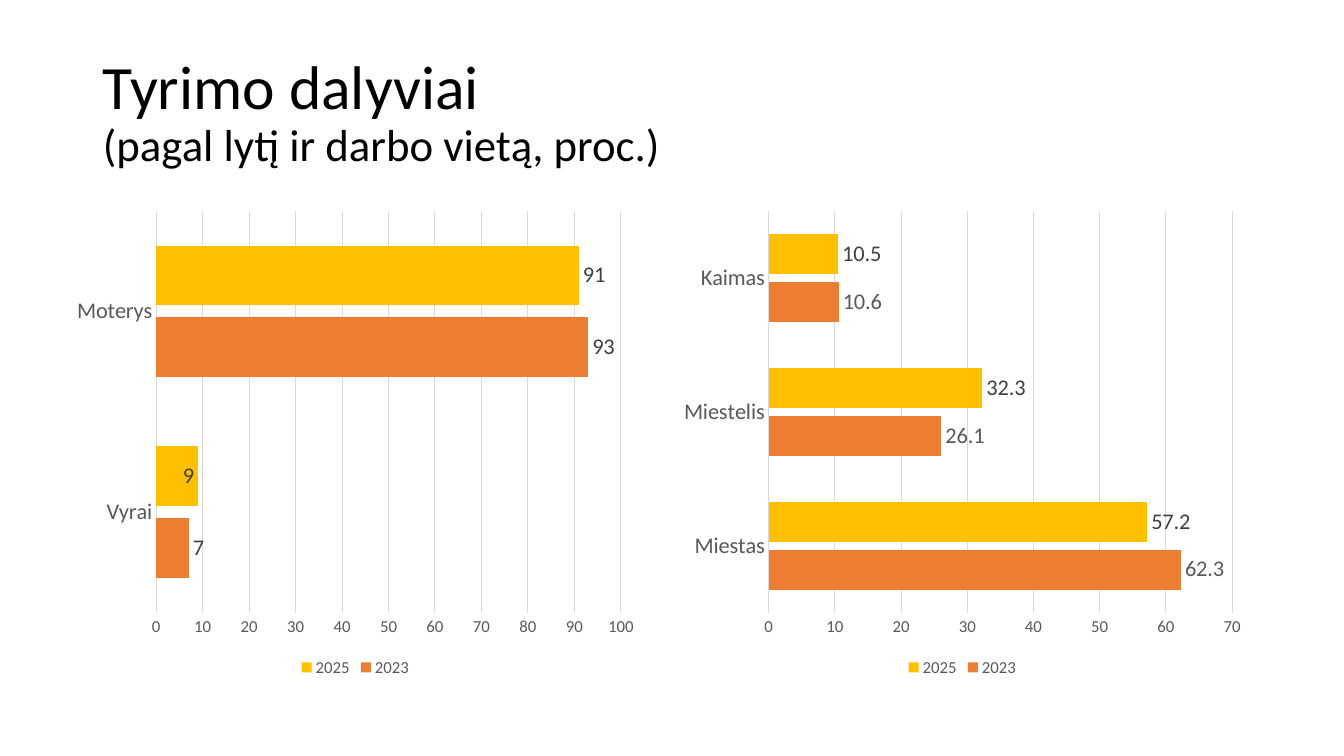
"""Build a slide with two bar charts of survey participants by gender and workplace."""
from pptx import Presentation
from pptx.chart.data import CategoryChartData
from pptx.dml.color import RGBColor
from pptx.enum.chart import XL_CHART_TYPE, XL_LABEL_POSITION, XL_LEGEND_POSITION, XL_TICK_MARK
from pptx.enum.text import MSO_ANCHOR, MSO_AUTO_SIZE, PP_ALIGN
from pptx.util import Inches, Pt

FONT = "Calibri"
BLACK = RGBColor(0x00, 0x00, 0x00)
DARK = RGBColor(0x40, 0x40, 0x40)
GRAY = RGBColor(0x59, 0x59, 0x59)
GRID = RGBColor(0xD9, 0xD9, 0xD9)
ORANGE = RGBColor(0xED, 0x7D, 0x31)
YELLOW = RGBColor(0xFF, 0xC0, 0x00)
OUTSIDE = XL_LABEL_POSITION.OUTSIDE_END
INSIDE = XL_LABEL_POSITION.INSIDE_END


def style(font, size, color):
    font.name = FONT
    font.size = Pt(size)
    font.bold = False
    font.color.rgb = color


def add_text(p, text, size=32, color=BLACK):
    r = p.add_run()
    r.text = text
    style(r.font, size, color)


prs = Presentation()
prs.slide_width = Inches(13.33)
prs.slide_height = Inches(7.5)
s = prs.slides.add_slide(prs.slide_layouts[5])

title = s.shapes.title
title.left, title.top = Inches(0.92), Inches(0.4)
title.width, title.height = Inches(10.97), Inches(1.45)
tf = title.text_frame
tf.word_wrap = True
tf.auto_size = MSO_AUTO_SIZE.NONE
tf.vertical_anchor = MSO_ANCHOR.MIDDLE
p = tf.paragraphs[0]
p.alignment = PP_ALIGN.LEFT
p.line_spacing = 0.9
add_text(p, "Tyrimo dalyviai", size=44)
p.add_line_break()
add_text(p, "(pagal lytį ir darbo vietą, proc.)")

charts = [
    (6.67, 70, ["Miestas", "Miestelis", "Kaimas"],
     [("2023", [62.3, 26.1, 10.6], ORANGE, GRAY, OUTSIDE),
      ("2025", [57.2, 32.3, 10.5], YELLOW, DARK, OUTSIDE)]),
    (0.65, 100, ["Vyrai", "Moterys"],
     [("2023", [7, 93], ORANGE, DARK, OUTSIDE),
      ("2025", [9, 91], YELLOW, DARK, INSIDE)]),
]

for left, top_value, categories, series in charts:
    data = CategoryChartData()
    data.categories = categories
    for name, values, *_ in series:
        data.add_series(name, values)
    chart = s.shapes.add_chart(XL_CHART_TYPE.BAR_CLUSTERED, Inches(left), Inches(2),
                               Inches(5.75), Inches(4.76), data).chart
    style(chart.font, 10, BLACK)
    chart.has_title = False
    chart.has_legend = True
    chart.legend.position = XL_LEGEND_POSITION.BOTTOM
    chart.legend.include_in_layout = False
    style(chart.legend.font, 12, GRAY)

    for axis, size in ((chart.category_axis, 16), (chart.value_axis, 12)):
        axis.major_tick_mark = axis.minor_tick_mark = XL_TICK_MARK.NONE
        style(axis.tick_labels.font, size, GRAY)
    chart.category_axis.format.line.color.rgb = GRID
    chart.category_axis.format.line.width = Pt(1)
    chart.value_axis.format.line.fill.background()
    chart.value_axis.minimum_scale = 0
    chart.value_axis.maximum_scale = top_value
    chart.value_axis.major_unit = 10
    grid = chart.value_axis.major_gridlines.format.line
    grid.color.rgb = GRID
    grid.width = Pt(0.75)

    plot = chart.plots[0]
    plot.gap_width = 115
    plot.overlap = -20
    plot.vary_by_categories = False
    for bars, (_, _, fill, label_color, position) in zip(plot.series, series):
        bars.format.fill.solid()
        bars.format.fill.fore_color.rgb = fill
        labels = bars.data_labels
        labels.show_value = True
        labels.position = position
        style(labels.font, 16, label_color)
        if position == INSIDE:
            women = bars.points[1].data_label
            style(women.font, 16, label_color)
            women.position = OUTSIDE

prs.save("out.pptx")
